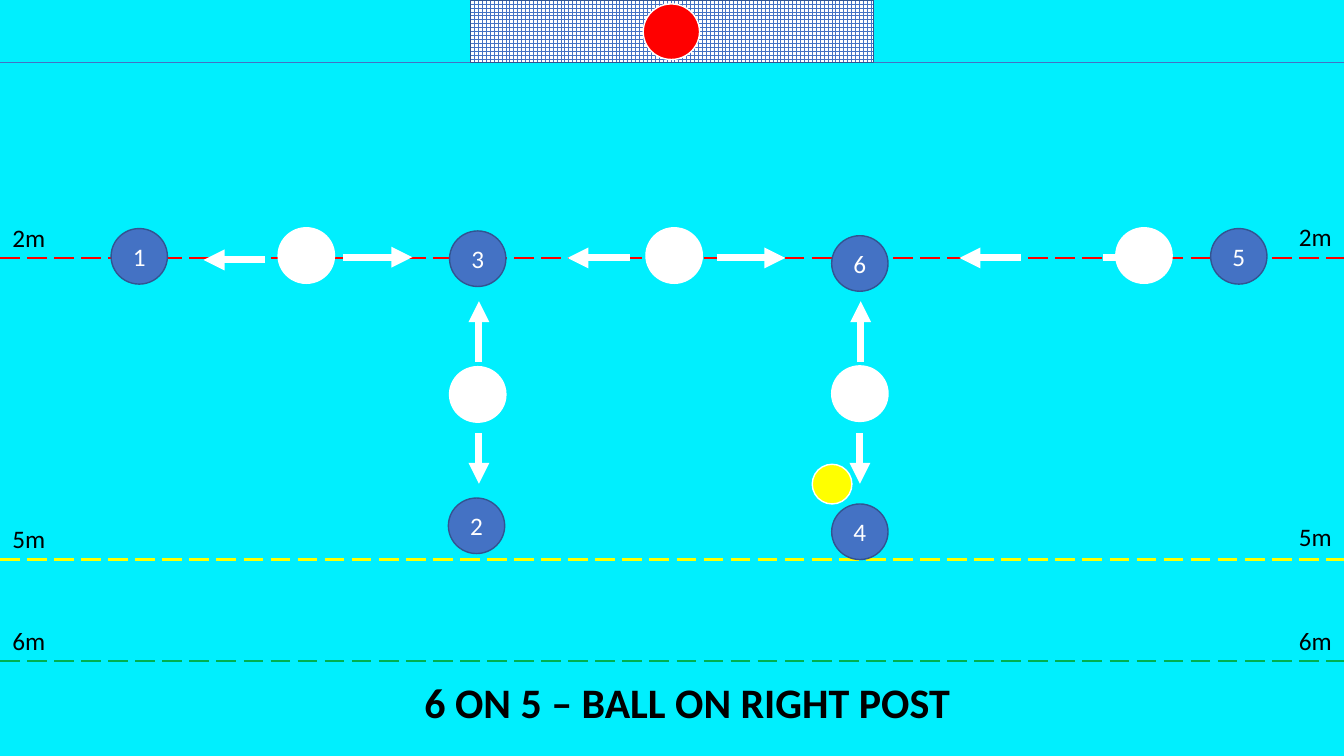
from pptx import Presentation
from pptx.dml.color import RGBColor
from pptx.enum.dml import MSO_LINE, MSO_PATTERN
from pptx.enum.shapes import MSO_CONNECTOR, MSO_SHAPE
from pptx.enum.text import MSO_ANCHOR, PP_ALIGN
from pptx.oxml.ns import qn
from pptx.util import Cm, Pt
from lxml.etree import SubElement

# Content: all lengths in cm
WIDTH, HEIGHT = 33.87, 19.05
TITLE = "6 ON 5 – BALL ON RIGHT POST"
TITLE_BOX = (10.44, 16.92, 14.53, 1.55)
POOL, BLUE, DARK_BLUE = "00EFFE", "4472C4", "325491"
WHITE, BLACK, RED, YELLOW, GREEN = "FFFFFF", "000000", "FF0000", "FFFF00", "00B050"

GOAL_LINE_Y = 1.58
GOAL_WIDTH = 10.16
# label, line height, line colour, top of left label, top of right label
DISTANCES = [
    ("2m", 6.5, RED, 5.49, 5.44),
    ("6m", 16.66, GREEN, 15.62, 15.62),
    ("5m", 14.1, YELLOW, 13.06, 13.0),
]
LABEL_SIZE = (1.45, 1.02)
CAP_SIZE = (1.42, 1.4)
BALL_SIZE = (1.0, 1.0)

# Centres
ATTACKERS = {
    "1": (3.51, 6.46), "2": (12.01, 13.25), "3": (12.04, 6.52),
    "4": (21.67, 13.4), "5": (31.22, 6.46), "6": (21.67, 6.64),
}
DEFENDERS = [(7.72, 6.44), (16.99, 6.44), (28.83, 6.44), (12.04, 9.94), (21.67, 9.92)]
GOALKEEPER = (16.92, 0.8)
BALL = (20.97, 12.2)

# start x, end x, height
SIDEWAYS_MOVES = [
    (8.64, 10.39, 6.48), (6.68, 5.13, 6.55), (15.88, 14.3, 6.5),
    (18.06, 19.79, 6.5), (27.79, 29.54, 6.48), (25.73, 24.18, 6.5),
]
# x, start height, end height
UPRIGHT_MOVES = [
    (12.07, 10.92, 12.19), (12.07, 9.12, 7.59),
    (21.67, 10.92, 12.19), (21.69, 9.12, 7.59),
]

LABEL_FONT = {"name": "Calibri", "size": Pt(18), "bold": False}
TITLE_FONT = {"name": "Calibri", "size": Pt(30), "bold": True}


def rgb(hex_colour):
    return RGBColor.from_string(hex_colour)


def cm(values):
    return [Cm(value) for value in values]


def write(shape, text, font, colour, align=PP_ALIGN.CENTER, anchor=MSO_ANCHOR.MIDDLE):
    frame = shape.text_frame
    frame.word_wrap = True
    frame.vertical_anchor = anchor
    paragraph = frame.paragraphs[0]
    paragraph.alignment = align
    paragraph.line_spacing = 1.0
    run = paragraph.add_run()
    run.text = text
    for attribute, value in font.items():
        setattr(run.font, attribute, value)
    run.font.color.rgb = rgb(colour)


def add_line(start, end, colour, weight, dash=None, arrow=False):
    line = slide.shapes.add_connector(MSO_CONNECTOR.STRAIGHT, *cm(start + end))
    line.line.color.rgb = rgb(colour)
    line.line.width = Pt(weight)
    if dash:
        line.line.dash_style = dash
    properties = line._element.spPr
    if arrow:
        SubElement(properties.find(qn("a:ln")), qn("a:tailEnd"), type="triangle")
    SubElement(properties, qn("a:effectLst"))


def add_outlined(preset, box, outline):
    shape = slide.shapes.add_shape(preset, *cm(box))
    shape.shadow.inherit = False
    shape.line.color.rgb = rgb(outline)
    shape.line.width = Pt(1)
    return shape


def add_disc(centre, colour, outline=WHITE, size=CAP_SIZE):
    corner = tuple(c - s / 2 for c, s in zip(centre, size))
    disc = add_outlined(MSO_SHAPE.OVAL, corner + size, outline)
    disc.fill.solid()
    disc.fill.fore_color.rgb = rgb(colour)
    return disc


presentation = Presentation()
presentation.slide_width, presentation.slide_height = Cm(WIDTH), Cm(HEIGHT)
slide = presentation.slides.add_slide(presentation.slide_layouts[5])
slide.background.fill.solid()
slide.background.fill.fore_color.rgb = rgb(POOL)

title = slide.shapes.title
title.left, title.top, title.width, title.height = cm(TITLE_BOX)
write(title, TITLE, TITLE_FONT, BLACK, PP_ALIGN.LEFT, MSO_ANCHOR.TOP)

add_line((0, GOAL_LINE_Y), (WIDTH, GOAL_LINE_Y), BLUE, 0.5)
goal_box = ((WIDTH - GOAL_WIDTH) / 2, 0, GOAL_WIDTH, GOAL_LINE_Y)
goal = add_outlined(MSO_SHAPE.RECTANGLE, goal_box, DARK_BLUE)
goal.fill.patterned()
goal.fill.pattern = MSO_PATTERN.LARGE_GRID
goal.fill.fore_color.rgb = rgb(BLUE)
goal.fill.back_color.rgb = rgb(WHITE)

for distance, y, colour, left_top, right_top in DISTANCES:
    add_line((0, y), (WIDTH, y), colour, 1.75, MSO_LINE.LONG_DASH)
    for x, top in ((0, left_top), (WIDTH - LABEL_SIZE[0], right_top)):
        label = slide.shapes.add_textbox(*cm((x, top) + LABEL_SIZE))
        write(label, distance, LABEL_FONT, BLACK, anchor=MSO_ANCHOR.TOP)

for number, centre in ATTACKERS.items():
    write(add_disc(centre, BLUE, DARK_BLUE), number, LABEL_FONT, WHITE)
for centre in DEFENDERS:
    add_disc(centre, WHITE)
add_disc(GOALKEEPER, RED)

moves = [((x1, y), (x2, y)) for x1, x2, y in SIDEWAYS_MOVES]
moves += [((x, y1), (x, y2)) for x, y1, y2 in UPRIGHT_MOVES]
for start, end in moves:
    add_line(start, end, WHITE, 5, arrow=True)
add_disc(BALL, YELLOW, size=BALL_SIZE)

presentation.save("out.pptx")
